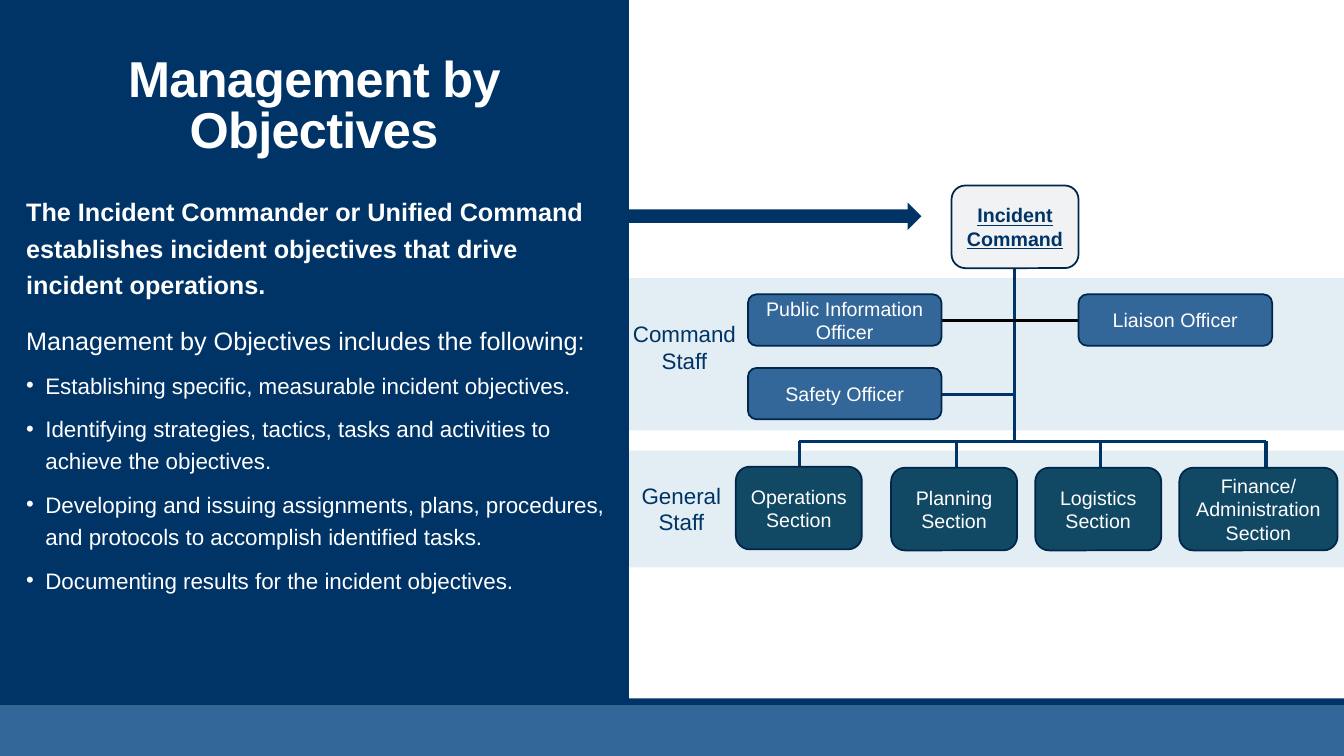
import pptx
import pptx.dml.color
import pptx.enum.shapes
import pptx.enum.text
import pptx.oxml
import pptx.oxml.ns
import pptx.util
from lxml import etree

RGBColor = pptx.dml.color.RGBColor
NAVY = RGBColor(0x00, 0x33, 0x66)
BLUE = RGBColor(0x33, 0x66, 0x99)
TEAL = RGBColor(0x11, 0x48, 0x64)
OUTLINE = RGBColor(0x00, 0x26, 0x4B)
BAND = RGBColor(0xE2, 0xEE, 0xF4)
PALE = RGBColor(0xF0, 0xF2, 0xF4)
WHITE = RGBColor(0xFF, 0xFF, 0xFF)
BLACK = RGBColor(0x00, 0x00, 0x00)

Pt = pptx.util.Pt
SHAPE = pptx.enum.shapes.MSO_SHAPE
ANCHOR = pptx.enum.text.MSO_ANCHOR
CENTER = pptx.enum.text.PP_ALIGN.CENTER
NO_AUTOFIT = pptx.enum.text.MSO_AUTO_SIZE.NONE

# Square grid: ten cells to the inch, 133.33 columns by 75 rows
CELL = pptx.util.Inches(0.1)
COLUMNS, ROWS = 133.33, 75
PANEL_WIDTH = 62.4

presentation = pptx.Presentation()
presentation.slide_width = round(COLUMNS * CELL)
presentation.slide_height = ROWS * CELL
slide = presentation.slides.add_slide(presentation.slide_layouts[1])


def add_box(kind, column, row, width, height, fill, label="", color=WHITE):
    """Add a filled shape; one with a label also gets an outline and text."""
    shape = slide.shapes.add_shape(
        kind, *(round(cells * CELL) for cells in (column, row, width, height)))
    shape.shadow.inherit = False
    shape.fill.solid()
    shape.fill.fore_color.rgb = fill
    shape.line.fill.background()
    if label:
        shape.line.color.rgb = OUTLINE
        shape.line.width = Pt(1.25)
        frame = shape.text_frame
        frame.word_wrap = True
        frame.vertical_anchor = ANCHOR.MIDDLE
        frame.margin_left = frame.margin_right = CELL // 2
        frame.margin_top = frame.margin_bottom = 0
        frame.text = label
        paragraph = frame.paragraphs[0]
        paragraph.alignment = CENTER
        font = paragraph.runs[0].font
        font.name, font.size, font.color.rgb = "Arial", Pt(14), color
    return shape


def add_line(start_column, start_row, end_column, end_row, color=NAVY):
    line = slide.shapes.add_connector(
        pptx.enum.shapes.MSO_CONNECTOR.STRAIGHT,
        *(round(cells * CELL) for cells in (start_column, start_row, end_column, end_row)))
    line.line.color.rgb = color
    line.line.width = Pt(2.25)
    etree.SubElement(line.element.spPr, pptx.oxml.ns.qn("a:effectLst"))


# Footer and staff bands
add_box(SHAPE.RECTANGLE, 0, 70, COLUMNS, 5, BLUE)
add_box(SHAPE.RECTANGLE, 0, 69.3, COLUMNS, 0.7, NAVY)
for row, height in ((27.6, 15.1), (44.7, 11.6)):
    add_box(SHAPE.RECTANGLE, PANEL_WIDTH, row, COLUMNS - PANEL_WIDTH, height, BAND)

# Lines of the organization chart
TRUNK, BUS_ROW = 100.65, 43.8
SECTIONS = (
    ("Operations Section", 73, 46.3, 12.5, 79.3),
    ("Planning Section", 88.4, 46.4, 12.5, 94.9),
    ("Logistics Section", 102.7, 46.4, 12.5, 109.2),
    ("Finance/ Administration Section", 117, 46.4, 15.7, 125.6),
)
for label, column, row, width, drop in SECTIONS:
    add_line(drop, BUS_ROW, drop, row)
add_line(TRUNK, 26.6, TRUNK, BUS_ROW)
add_line(SECTIONS[0][-1], BUS_ROW, SECTIONS[-1][-1], BUS_ROW)
add_line(93.4, 31.8, 107, 31.8, BLACK)
add_line(93.4, 39.1, TRUNK, 39.1)

# Boxes of the organization chart
command = add_box(SHAPE.ROUNDED_RECTANGLE, 94.4, 18.4, 12.6, 8.2, PALE, "Incident Command", NAVY)
command_font = command.text_frame.paragraphs[0].runs[0].font
command_font.bold = command_font.underline = True
for label, column, row, width, drop in SECTIONS:
    add_box(SHAPE.ROUNDED_RECTANGLE, column, row, width, 8.2, TEAL, label)
for label, column, row in (("Public Information Officer", 74.2, 29.2),
                           ("Liaison Officer", 107, 29.2),
                           ("Safety Officer", 74.2, 36.5)):
    add_box(SHAPE.ROUNDED_RECTANGLE, column, row, 19.2, 5.1, BLUE, label)

for label, column, row in (("Command Staff", 61.4, 31.3), ("General Staff", 61.1, 47.3)):
    text_box = slide.shapes.add_textbox(
        *(round(cells * CELL) for cells in (column, row, 13, 6.4)))
    text_box.text_frame.word_wrap = True
    text_box.text_frame.text = label
    paragraph = text_box.text_frame.paragraphs[0]
    paragraph.alignment = CENTER
    font = paragraph.runs[0].font
    font.name, font.size, font.color.rgb = "Arial", Pt(16), NAVY

# Left panel with title and body in front of it
add_box(SHAPE.RECTANGLE, 0, 0, PANEL_WIDTH, 69.4, NAVY)
title, body = slide.shapes.title, slide.placeholders[1]
for placeholder, place in ((title, (8.8, 0.4, 44.7, 15.9)),
                           (body, (2.6, 18.4, 58.1, 46.4))):
    placeholder.left, placeholder.top, placeholder.width, placeholder.height = (
        round(cells * CELL) for cells in place)
    placeholder.text_frame.word_wrap = True
    placeholder.text_frame.auto_size = NO_AUTOFIT
    placeholder.element.getparent().append(placeholder.element)

title.text_frame.vertical_anchor = ANCHOR.BOTTOM
title.text_frame.text = "Management by Objectives"
paragraph = title.text_frame.paragraphs[0]
paragraph.alignment = CENTER
paragraph.line_spacing = 0.85
font = paragraph.runs[0].font
font.name, font.size, font.bold, font.color.rgb = "Arial", Pt(36), True, WHITE
paragraph.runs[0].font._element.set("spc", "-50")

# Text, size, bold, space before, bulleted
BODY = (
    ("The Incident Commander or Unified Command establishes incident objectives "
     "that drive incident operations.", 18, True, 0, False),
    ("Management by Objectives includes the following:", 18, False, 12, False),
    ("Establishing specific, measurable incident objectives.", 16, False, 6, True),
    ("Identifying strategies, tactics, tasks and activities to achieve the objectives.",
     16, False, 6, True),
    ("Developing and issuing assignments, plans, procedures, and protocols to "
     "accomplish identified tasks.", 16, False, 6, True),
    ("Documenting results for the incident objectives.", 16, False, 6, True),
)
frame = body.text_frame
frame.margin_left = frame.margin_right = 0
frame.vertical_anchor = ANCHOR.TOP
frame.text = "\n".join(entry[0] for entry in BODY)
for paragraph, (text, size, bold, space_before, bulleted) in zip(frame.paragraphs, BODY):
    paragraph.line_spacing = 1.2
    paragraph.space_before = Pt(space_before)
    paragraph.space_after = Pt(2)
    properties = paragraph._p.get_or_add_pPr()
    indent = round(1.9 * CELL) if bulleted else 0
    properties.set("marL", str(indent))
    properties.set("indent", str(-indent))
    if bulleted:
        bullet_color = etree.SubElement(properties, pptx.oxml.ns.qn("a:buClr"))
        etree.SubElement(bullet_color, pptx.oxml.ns.qn("a:srgbClr"), val=str(WHITE))
        etree.SubElement(properties, pptx.oxml.ns.qn("a:buSzPct"), val="99000")
        etree.SubElement(properties, pptx.oxml.ns.qn("a:buFont"), typeface="Arial")
        etree.SubElement(properties, pptx.oxml.ns.qn("a:buChar"), char="•")
    else:
        etree.SubElement(properties, pptx.oxml.ns.qn("a:buNone"))
    font = paragraph.runs[0].font
    font.name, font.size, font.bold, font.color.rgb = "Arial", Pt(size), bold, WHITE

add_box(SHAPE.RIGHT_ARROW, 60.5, 20.1, 30.9, 2.7, NAVY)

presentation.save("out.pptx")
